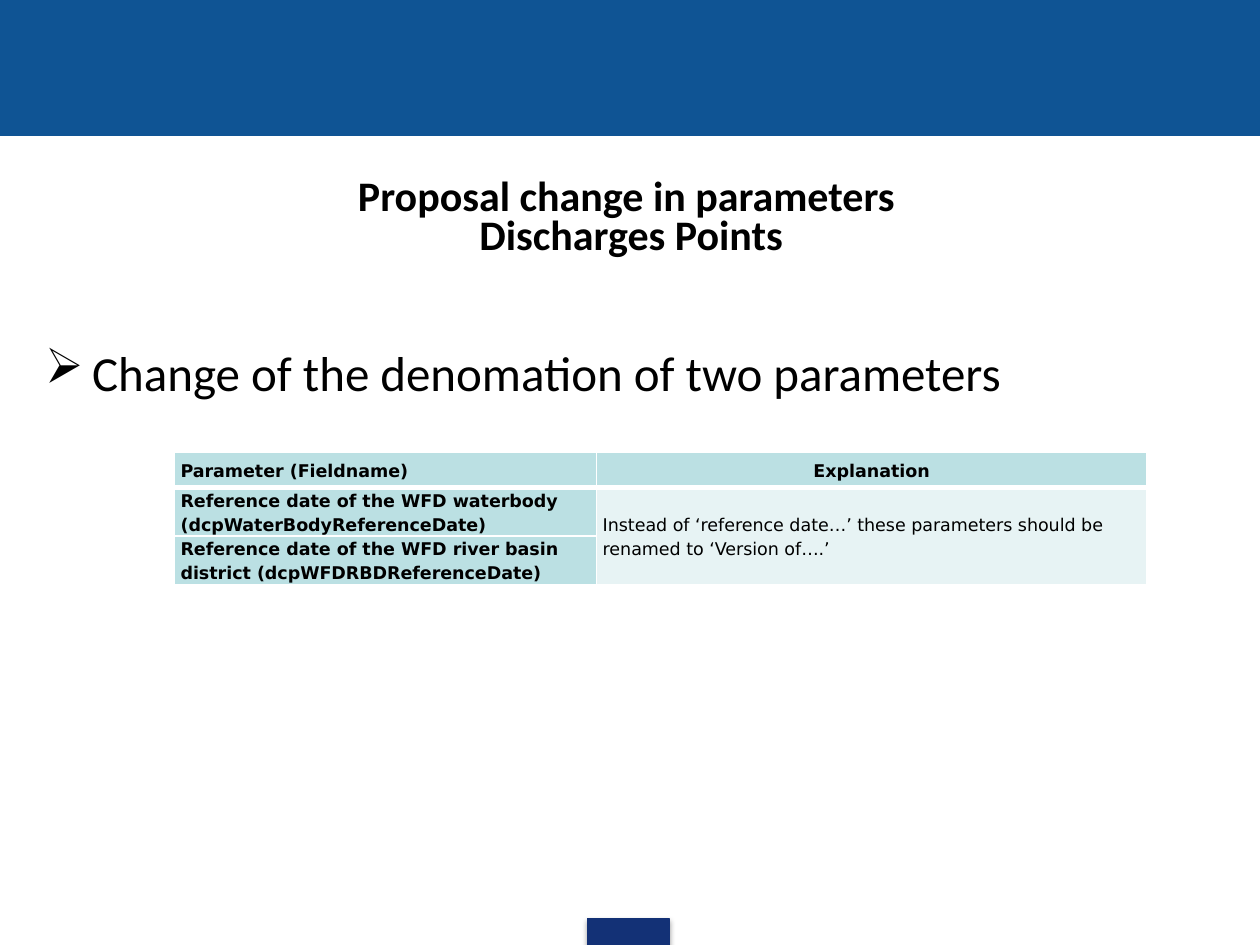
from lxml import etree
from pptx import Presentation
from pptx.dml.color import RGBColor
from pptx.enum.shapes import MSO_SHAPE
from pptx.enum.text import MSO_ANCHOR, MSO_AUTO_SIZE, PP_ALIGN
from pptx.oxml import parse_xml
from pptx.oxml.ns import nsdecls, qn
from pptx.util import Cm, Pt

RECTANGLE = MSO_SHAPE.RECTANGLE
TOP, MIDDLE = MSO_ANCHOR.TOP, MSO_ANCHOR.MIDDLE
LEFT, CENTER = PP_ALIGN.LEFT, PP_ALIGN.CENTER

SLIDE_WIDTH, SLIDE_HEIGHT = 25.4, 19.05
TITLE_LINES = ["Proposal change in parameters ", "Discharges Points"]
CHANGE = "Change of the denomation of two parameters"
HEADINGS = ["Parameter (Fieldname)", "Explanation"]
PARAMETERS = [
    "Reference date of the WFD waterbody (dcpWaterBodyReferenceDate)",
    "Reference date of the WFD river basin district (dcpWFDRBDReferenceDate)",
]
EXPLANATION = ("Instead of ‘reference date…’ these parameters should be "
               "renamed to ‘Version of….’")
COLUMN_WIDTHS = [8.51, 11.1]
ROW_HEIGHTS = [0.71, 0.92, 0.92]

BANNER_BLUE, FOOTER_BLUE = "0F5494", "133176"
HEADER_TEAL, BODY_TEAL = "BBE0E3", "E7F3F4"
BLACK = "000000"


def rgb(value):
    return RGBColor.from_string(value)


def set_font(paragraph, name, size, bold):
    font = paragraph.font
    font.name, font.size, font.bold = name, Pt(size), bold
    font.color.rgb = rgb(BLACK)


def add_bar(slide, left, top, width, height, color):
    bar = slide.shapes.add_shape(RECTANGLE, Cm(left), Cm(top), Cm(width), Cm(height))
    bar.shadow.inherit = False
    bar.fill.solid()
    bar.fill.fore_color.rgb = rgb(color)
    bar.line.color.rgb = rgb(color)
    bar.line.width = Pt(0.75)
    return bar


def add_soft_shadow(shape):
    effects = shape._element.spPr.find(qn("a:effectLst"))
    effects.append(parse_xml(
        f'<a:outerShdw {nsdecls("a")} blurRad="{Pt(3.1)}" dist="{Pt(1.8)}" dir="5400000">'
        f'<a:srgbClr val="{BLACK}"><a:alpha val="35000"/></a:srgbClr></a:outerShdw>'))


def set_bullet(paragraph, character, indent):
    properties = paragraph._p.get_or_add_pPr()
    properties.set("marL", str(Cm(indent)))
    properties.set("indent", str(-Cm(indent)))
    etree.SubElement(properties, qn("a:buChar")).set("char", character)


def set_borders(cell, **widths):
    """Draw white cell borders; widths in points are keyed by L, R, T and B."""
    properties = cell._tc.get_or_add_tcPr()
    for side, width in widths.items():
        properties.append(parse_xml(
            f'<a:ln{side} {nsdecls("a")} w="{Pt(width)}"><a:solidFill>'
            f'<a:srgbClr val="FFFFFF"/></a:solidFill></a:ln{side}>'))


def fill_cell(cell, text, color, bold, align=LEFT, space_after=0, top=1, bottom=1):
    set_borders(cell, L=1, R=1, T=top, B=bottom)
    cell.fill.solid()
    cell.fill.fore_color.rgb = rgb(color)
    cell.vertical_anchor = MIDDLE
    cell.margin_left = cell.margin_right = Cm(0.13)
    cell.margin_top = cell.margin_bottom = 0
    cell.text = text
    paragraph = cell.text_frame.paragraphs[0]
    paragraph.alignment = align
    paragraph.line_spacing = 1.15
    paragraph.space_after = Pt(space_after)
    set_font(paragraph, "DejaVu Sans", 10, bold)


def add_title(slide):
    title = slide.shapes.title
    title.left, title.top, title.width, title.height = Cm(0.66), Cm(3.53), Cm(24.13), Cm(1.8)
    frame = title.text_frame
    frame.auto_size = MSO_AUTO_SIZE.NONE
    frame.vertical_anchor = TOP
    frame.margin_top = frame.margin_bottom = Cm(0.1)
    frame.text = "\n".join(TITLE_LINES)
    for paragraph in frame.paragraphs:
        paragraph.alignment = CENTER
        paragraph.line_spacing = 0.78
        set_font(paragraph, "Calibri", 24, True)


def add_change(slide):
    frame = slide.shapes.add_textbox(Cm(0.66), Cm(6.78), Cm(24.13), Cm(1.45)).text_frame
    frame.word_wrap = True
    frame.text = CHANGE
    paragraph = frame.paragraphs[0]
    set_bullet(paragraph, "➢", 0.95)
    set_font(paragraph, "Calibri", 28, False)


def add_parameter_table(slide):
    table = slide.shapes.add_table(
        len(ROW_HEIGHTS), len(COLUMN_WIDTHS), Cm(3.51), Cm(9.12),
        Cm(sum(COLUMN_WIDTHS)), Cm(sum(ROW_HEIGHTS))).table
    for column, width in zip(table.columns, COLUMN_WIDTHS):
        column.width = Cm(width)
    for row, height in zip(table.rows, ROW_HEIGHTS):
        row.height = Cm(height)

    for index, (heading, align) in enumerate(zip(HEADINGS, [LEFT, CENTER])):
        fill_cell(table.cell(0, index), heading, HEADER_TEAL, True, align, bottom=3)
    for index, parameter in enumerate(PARAMETERS, start=1):
        fill_cell(table.cell(index, 0), parameter, HEADER_TEAL, True,
                  space_after=6, top=3 if index == 1 else 1)
    explanation = table.cell(1, 1)
    explanation.merge(table.cell(len(PARAMETERS), 1))
    fill_cell(explanation, EXPLANATION, BODY_TEAL, False, space_after=3, top=3)


def main():
    presentation = Presentation()
    presentation.slide_width, presentation.slide_height = Cm(SLIDE_WIDTH), Cm(SLIDE_HEIGHT)
    slide = presentation.slides.add_slide(presentation.slide_layouts[5])
    add_bar(slide, 0, 0, SLIDE_WIDTH, 2.74, BANNER_BLUE)
    add_soft_shadow(add_bar(slide, 11.84, 18.52, 1.65, SLIDE_HEIGHT - 18.52, FOOTER_BLUE))
    add_title(slide)
    add_change(slide)
    add_parameter_table(slide)
    presentation.save("out.pptx")


if __name__ == "__main__":
    main()
